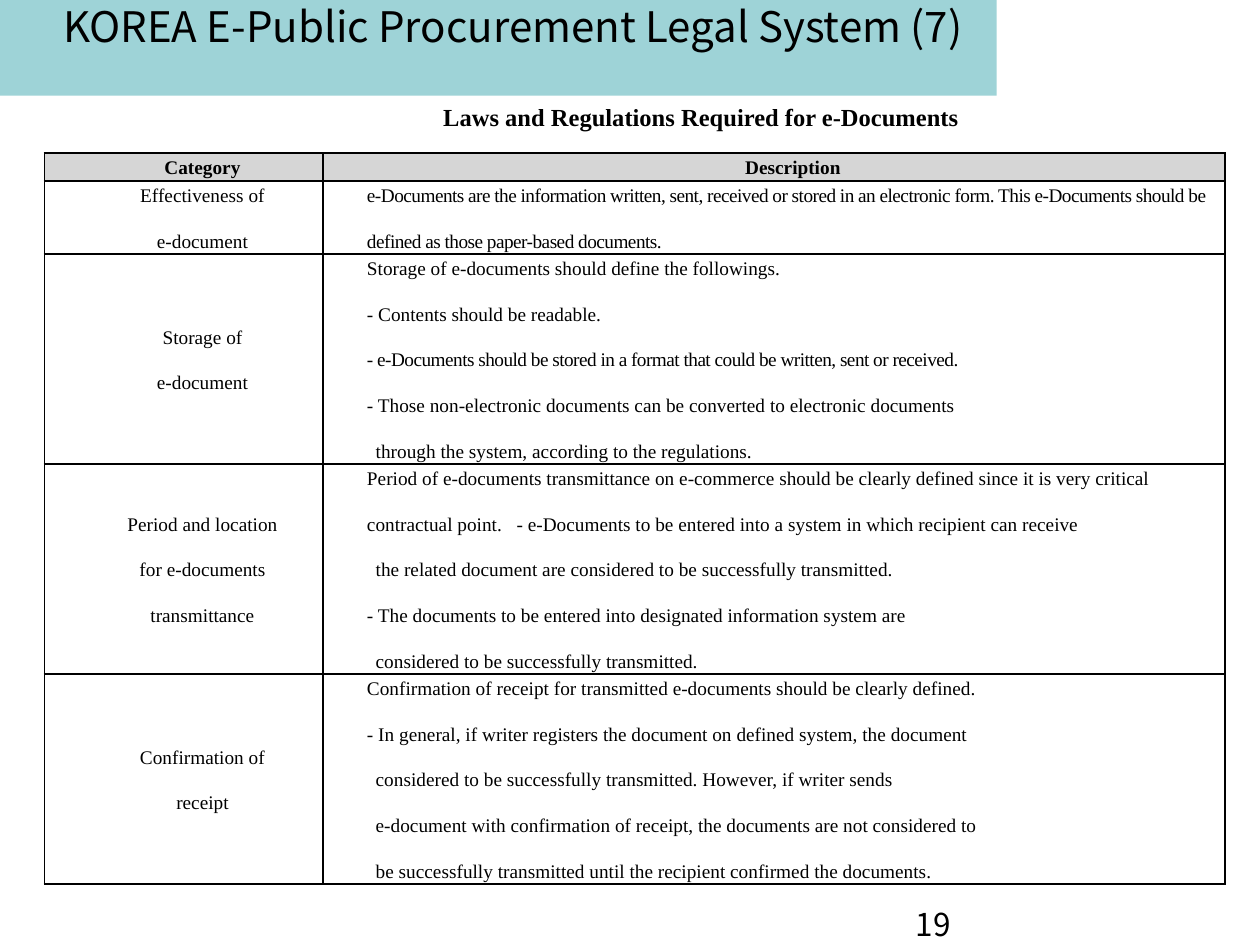
from dataclasses import dataclass

from lxml import etree
from pptx import Presentation
from pptx.dml.color import RGBColor
from pptx.enum.shapes import MSO_SHAPE
from pptx.enum.text import MSO_ANCHOR, MSO_AUTO_SIZE, PP_ALIGN
from pptx.oxml.ns import qn
from pptx.util import Pt

RECT = MSO_SHAPE.RECTANGLE
TOP, MIDDLE = MSO_ANCHOR.TOP, MSO_ANCHOR.MIDDLE
LEFT, CENTER, JUSTIFY = PP_ALIGN.LEFT, PP_ALIGN.CENTER, PP_ALIGN.JUSTIFY
NO_FIT = MSO_AUTO_SIZE.NONE


@dataclass(frozen=True)
class Theme:
    """Colours, fonts and type sizes in points."""
    ink: str = "000000"
    banner: str = "9ED3D7"
    header: str = "D6D6D6"
    sans: str = "Noto Sans CJK KR"
    serif: str = "Times New Roman"
    title: int = 24
    number: int = 18
    subtitle: int = 14
    body: int = 11


@dataclass(frozen=True)
class Line:
    """One line of a cell, with letter spacing and an optional spaced lead-in."""
    text: str
    first: float = 0
    spacing: float = 0
    lead: str = ""
    lead_gap: float = 0


THEME = Theme()


def tight(text):
    """Return a line with condensed letters."""
    return Line(text, spacing=-0.3)


def more(text):
    """Return a line that continues a dash item."""
    return Line(text, first=5)


HEADER = ("Category", "Description")
ROWS = [
    (["Effectiveness of", "e-document"],
     [tight("e-Documents are the information written, sent, received or stored in an "
            "electronic form. This e-Documents should be"),
      tight("defined as those paper-based documents.")]),
    (["Storage of", "e-document"],
     [Line("Storage of e-documents should define the followings."),
      Line("- Contents should be readable."),
      tight("- e-Documents should be stored in a format that could be written, sent or received."),
      Line("- Those non-electronic documents can be converted to electronic documents"),
      more("through the system, according to the regulations.")]),
    (["Period and location", "for e-documents", "transmittance"],
     [Line("Period of e-documents transmittance on e-commerce should be clearly defined "
           "since it is very critical"),
      Line("- e-Documents to be entered into a system in which recipient can receive",
           lead="contractual point.", lead_gap=5.5),
      more("the related document are considered to be successfully transmitted."),
      Line("- The documents to be entered into designated information system are"),
      more("considered to be successfully transmitted.")]),
    (["Confirmation of", "receipt"],
     [Line("Confirmation of receipt for transmitted e-documents should be clearly defined."),
      Line("- In general, if writer registers the document on defined system, the document"),
      more("considered to be successfully transmitted. However, if writer sends"),
      more("e-document with confirmation of receipt, the documents are not considered to"),
      more("be successfully transmitted until the recipient confirmed the documents.")]),
]


def style(p, size, font, align, bold=False):
    """Set the alignment and font of a paragraph."""
    p.alignment = align
    f = p.font
    f.size, f.name, f.bold = Pt(size), font, bold
    f.color.rgb = RGBColor.from_string(THEME.ink)


def indent(p, left, first=0):
    """Set the left margin and first-line indent of a paragraph."""
    pPr = p._p.get_or_add_pPr()
    pPr.set("marL", str(Pt(left)))
    pPr.set("indent", str(Pt(first)))


def add_run(p, text, spacing=0):
    """Append a run with the given letter spacing."""
    r = p.add_run()
    r.text = text
    if spacing:
        r._r.get_or_add_rPr().set("spc", str(round(spacing * 100)))


def place(sp, x, y, w, h):
    """Move and size a shape."""
    sp.left, sp.top, sp.width, sp.height = Pt(x), Pt(y), Pt(w), Pt(h)


def fill_frame(sp, text, size, font, align, anchor=TOP, bold=False):
    """Write one styled paragraph into a shape and return it."""
    tf = sp.text_frame
    tf.word_wrap, tf.auto_size, tf.vertical_anchor = True, NO_FIT, anchor
    tf.margin_top = tf.margin_bottom = 0
    tf.text = text
    p = tf.paragraphs[0]
    style(p, size, font, align, bold)
    return p


def add_banner(s):
    """Draw the colour band behind the title."""
    sp = s.shapes.add_shape(RECT, 0, 0, Pt(569.5), Pt(54.7))
    sp.shadow.inherit = False
    sp.fill.solid()
    sp.fill.fore_color.rgb = RGBColor.from_string(THEME.banner)
    sp.line.fill.background()
    s.shapes._spTree.insert(2, sp._element)


def add_text(s, box, *args, **kwargs):
    """Add a text box and return its paragraph."""
    sp = s.shapes.add_textbox(0, 0, 0, 0)
    place(sp, *box)
    return fill_frame(sp, *args, **kwargs)


def add_borders(cell):
    """Draw a thin line on all four sides of a cell."""
    tcPr = cell._tc.get_or_add_tcPr()
    for side in ("lnL", "lnR", "lnT", "lnB"):
        ln = etree.SubElement(tcPr, qn(f"a:{side}"), w=str(Pt(1)))
        solid = etree.SubElement(ln, qn("a:solidFill"))
        etree.SubElement(solid, qn("a:srgbClr"), val=THEME.ink)


def fill_cell(cell, lines, align, header=False):
    """Write and format the lines of a table cell."""
    add_borders(cell)
    if header:
        cell.fill.solid()
        cell.fill.fore_color.rgb = RGBColor.from_string(THEME.header)
    else:
        cell.fill.background()
    cell.vertical_anchor = MIDDLE
    cell.margin_left = cell.margin_right = Pt(3.6)
    cell.margin_top = cell.margin_bottom = Pt(0.7)
    tf = cell.text_frame
    for i, line in enumerate(lines):
        p = tf.add_paragraph() if i else tf.paragraphs[0]
        indent(p, 21.6, line.first)
        p.line_spacing = 1.15
        p.space_before = Pt(12 if i else 0)
        style(p, THEME.body, THEME.serif, align, header)
        if line.lead:
            add_run(p, line.lead)
            add_run(p, " ", line.lead_gap)
        add_run(p, line.text, line.spacing)


def add_law_table(s):
    """Add the table of categories and descriptions."""
    widths, heights = (159.2, 515.6), (16, 41.8, 120, 120, 120)
    table = s.shapes.add_table(len(heights), len(widths), Pt(25.3), Pt(87.3),
                               Pt(sum(widths)), Pt(sum(heights))).table
    for column, width in zip(table.columns, widths):
        column.width = Pt(width)
    for row, height in zip(table.rows, heights):
        row.height = Pt(height)
    for c, text in enumerate(HEADER):
        fill_cell(table.cell(0, c), [Line(text)], CENTER, header=True)
    for r, (category, description) in enumerate(ROWS, 1):
        fill_cell(table.cell(r, 0), [Line(text) for text in category], CENTER)
        fill_cell(table.cell(r, 1), description, JUSTIFY)


def main():
    """Build and save the slide."""
    prs = Presentation()
    prs.slide_width, prs.slide_height = Pt(720), Pt(540)
    s = prs.slides.add_slide(prs.slide_layouts[5])
    add_banner(s)
    title = s.shapes.title
    place(title, -31, 0, 648, 43.2)
    fill_frame(title, "KOREA E-Public Procurement Legal System (7)",
               THEME.title, THEME.sans, CENTER)
    add_law_table(s)
    p = add_text(s, (95, 54.7, 467.3, 24.5), "Laws and Regulations Required for e-Documents",
                 THEME.subtitle, THEME.serif, CENTER, MIDDLE, bold=True)
    indent(p, 144)
    add_text(s, (516.2, 517, 167.8, 23), "19", THEME.number, THEME.sans, LEFT)
    prs.save("out.pptx")


if __name__ == "__main__":
    main()
